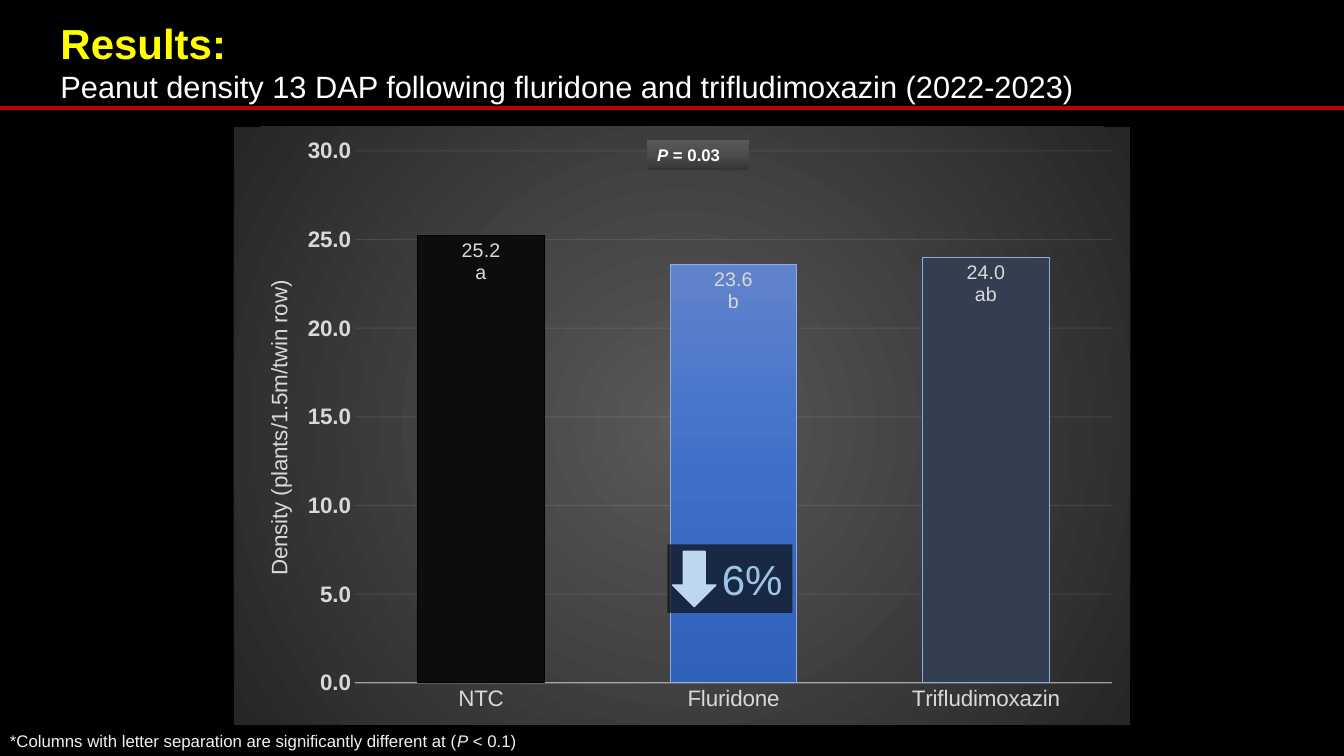
from lxml.etree import SubElement
from pptx import Presentation
from pptx.chart.data import CategoryChartData
from pptx.dml.color import RGBColor
from pptx.enum.chart import XL_CHART_TYPE, XL_LABEL_POSITION, XL_TICK_MARK
from pptx.enum.shapes import MSO_CONNECTOR, MSO_SHAPE
from pptx.enum.text import MSO_ANCHOR, PP_ALIGN
from pptx.oxml import parse_xml
from pptx.oxml.ns import nsdecls, qn
from pptx.util import Inches, Pt

BLACK = RGBColor(0x00, 0x00, 0x00)
NEAR_BLACK = RGBColor(0x0D, 0x0D, 0x0D)
WHITE = RGBColor(0xFF, 0xFF, 0xFF)
OFF_WHITE = RGBColor(0xF2, 0xF2, 0xF2)
LIGHT_GRAY = RGBColor(0xD9, 0xD9, 0xD9)
MID_GRAY = RGBColor(0x59, 0x59, 0x59)
GRAY = RGBColor(0x4B, 0x4B, 0x4B)
DARK_GRAY = RGBColor(0x35, 0x35, 0x35)
CHARCOAL = RGBColor(0x26, 0x26, 0x26)
YELLOW = RGBColor(0xFF, 0xFF, 0x00)
RED = RGBColor(0xC0, 0x00, 0x00)
SLATE = RGBColor(0x33, 0x3F, 0x50)
SKY = RGBColor(0x9D, 0xC3, 0xE6)
PALE_BLUE = RGBColor(0xBD, 0xD7, 0xEE)
OUTLINE_BLUE = RGBColor(0x8F, 0xAA, 0xDC)
BLUE_TOP = RGBColor(0x61, 0x83, 0xCB)
BLUE_MIDDLE = RGBColor(0x3E, 0x70, 0xCA)
BLUE_BOTTOM = RGBColor(0x30, 0x62, 0xBB)

LINEAR = '<a:lin ang="{}" scaled="0"/>'
UPWARD = LINEAR.format(16200000)
DOWNWARD = LINEAR.format(5400000)
RADIAL = ('<a:path path="circle"><a:fillToRect l="50000" t="50000" '
          'r="50000" b="50000"/></a:path>')


def gradient(colors, direction):
    step = 100000 // (len(colors) - 1)
    stops = "".join(f'<a:gs pos="{index * step}"><a:srgbClr val="{color}"/></a:gs>'
                    for index, color in enumerate(colors))
    return parse_xml(f'<a:gradFill {nsdecls("a")} rotWithShape="1">'
                     f'<a:gsLst>{stops}</a:gsLst>{direction}</a:gradFill>')


def replace_fill(properties, fill):
    properties.replace(properties.find(qn("a:noFill")), fill)


def set_opacity(color_element, percent):
    SubElement(color_element, qn("a:alpha")).set("val", str(percent * 1000))


def manual_layout(target=None, **shares):
    inner = f'<c:layoutTarget val="{target}"/>' if target else ""
    modes = "".join(f'<c:{axis}Mode val="edge"/>' for axis in "xy")
    values = "".join(f'<c:{name} val="{share}"/>' for name, share in shares.items())
    return parse_xml(f'<c:layout {nsdecls("c")}><c:manualLayout>'
                     f'{inner}{modes}{values}</c:manualLayout></c:layout>')


class SlideBuilder:
    font_name = "Arial"

    def __init__(self, presentation):
        self.width = presentation.slide_width
        self.height = presentation.slide_height
        self.slide = presentation.slides.add_slide(presentation.slide_layouts[6])
        self.slide.background.fill.solid()
        self.slide.background.fill.fore_color.rgb = BLACK

    def box(self, left, top, width, height):
        return (int(self.width * left / 100), int(self.height * top / 100),
                int(self.width * width / 100), int(self.height * height / 100))

    def style(self, font, size, color, bold=False):
        font.name = self.font_name
        font.size = Pt(size)
        font.color.rgb = color
        font.bold = bold

    def add_runs(self, paragraph, runs, size, color, bold=False):
        self.style(paragraph.font, size, color, bold)
        for text, italic in runs:
            run = paragraph.add_run()
            run.text = text
            if italic:
                run.font.italic = True

    def text(self, place, lines):
        frame = self.slide.shapes.add_textbox(*self.box(*place)).text_frame
        frame.word_wrap = True
        frame.vertical_anchor = MSO_ANCHOR.MIDDLE
        for index, (runs, size, color, bold) in enumerate(lines):
            paragraph = frame.add_paragraph() if index else frame.paragraphs[0]
            self.add_runs(paragraph, runs, size, color, bold)
        return frame

    def shape(self, kind, place, color=None):
        shape = self.slide.shapes.add_shape(kind, *self.box(*place))
        shape.shadow.inherit = False
        shape.line.fill.background()
        if color is None:
            shape.fill.background()
        else:
            shape.fill.solid()
            shape.fill.fore_color.rgb = color
        return shape

    def rule(self, top, color, weight):
        left, y, width, _ = self.box(0, top, 100, 0)
        connector = self.slide.shapes.add_connector(
            MSO_CONNECTOR.STRAIGHT, left, y, width, y)
        connector.line.color.rgb = color
        connector.line.width = Pt(weight)
        SubElement(connector._element.spPr, qn("a:effectLst"))

    def axis_line(self, line, weight, opacity, element):
        line.color.rgb = OFF_WHITE
        line.width = Pt(weight)
        set_opacity(element.xpath("c:spPr/a:ln/a:solidFill/a:srgbClr")[0], opacity)

    def column_chart(self, place, columns, axis_title):
        data = CategoryChartData(number_format="0.0")
        data.categories = [name for name, *_ in columns]
        data.add_series("Series 1", [value for _, value, *_ in columns])
        chart = self.slide.shapes.add_chart(
            XL_CHART_TYPE.COLUMN_CLUSTERED, *self.box(*place), data).chart
        chart.has_title = False
        chart.has_legend = False
        self.style(chart.font, 14, LIGHT_GRAY)
        backdrop = parse_xml(f'<c:spPr {nsdecls("c", "a")}><a:noFill/>'
                             '<a:ln><a:noFill/></a:ln></c:spPr>')
        replace_fill(backdrop, gradient([MID_GRAY, CHARCOAL], RADIAL))
        chart._chartSpace.find(qn("c:txPr")).addprevious(backdrop)
        self.style_axes(chart, axis_title)
        self.style_columns(chart.plots[0], columns)

    def style_axes(self, chart, axis_title):
        for axis, bold in ((chart.category_axis, False), (chart.value_axis, True)):
            axis.major_tick_mark = XL_TICK_MARK.NONE
            axis.minor_tick_mark = XL_TICK_MARK.NONE
            self.style(axis.tick_labels.font, 16, LIGHT_GRAY, bold)
        categories, values = chart.category_axis, chart.value_axis
        self.axis_line(categories.format.line, 1, 54, categories._element)
        values.format.line.fill.background()
        values.minimum_scale, values.maximum_scale, values.major_unit = 0, 30, 5
        values.tick_labels.number_format = "0.0"
        values.tick_labels.number_format_is_linked = False
        self.axis_line(values.major_gridlines.format.line, 0.75, 10,
                       values._element.find(qn("c:majorGridlines")))
        paragraph = values.axis_title.text_frame.paragraphs[0]
        self.add_runs(paragraph, [(axis_title, False)], 16, LIGHT_GRAY)
        title = values.axis_title._element
        for layout in title.findall(qn("c:layout")):
            title.remove(layout)
        title.find(qn("c:tx")).addnext(manual_layout(x=0.03, y=0.25))
        area = chart._chartSpace.chart.plotArea
        for layout in area.findall(qn("c:layout")):
            area.remove(layout)
        area.insert(0, manual_layout("inner", x=0.135, y=0.04, w=0.845, h=0.89))

    def style_columns(self, plot, columns):
        plot.gap_width = 100
        plot.overlap = -24
        plot.vary_by_categories = False
        series = plot.series[0]
        series.invert_if_negative = False
        labels = series.data_labels
        labels.show_value = True
        labels.number_format = "0.0"
        labels.number_format_is_linked = False
        labels.position = XL_LABEL_POSITION.INSIDE_END
        self.style(labels.font, 14, LIGHT_GRAY)
        for index, (_, value, letters, color, outline) in enumerate(columns):
            point = series.points[index]
            point.format.line.color.rgb = outline
            point.format.line.width = Pt(0.75)
            if color is None:
                point.format.fill.background()
                properties = series._element.xpath(f"c:dPt[c:idx/@val='{index}']/c:spPr")[0]
                replace_fill(properties, gradient(
                    [BLUE_TOP, BLUE_MIDDLE, BLUE_BOTTOM], DOWNWARD))
            else:
                point.format.fill.solid()
                point.format.fill.fore_color.rgb = color
            frame = point.data_label.text_frame
            frame.text = f"{value:.1f}\n{letters}"
            for paragraph in frame.paragraphs:
                self.style(paragraph.runs[0].font, 14, LIGHT_GRAY)
            point.data_label.position = XL_LABEL_POSITION.INSIDE_END


def main():
    presentation = Presentation()
    presentation.slide_width, presentation.slide_height = Inches(13.33), Inches(7.5)
    builder = SlideBuilder(presentation)

    heading = builder.text((0, 0, 100, 15.47), [
        ([("Results:", False)], 30, YELLOW, True),
        ([("Peanut density 13 DAP following fluridone and trifludimoxazin (2022-2023)",
           False)], 22, WHITE, False)])
    heading.margin_left, heading.margin_top = Inches(0.6), Inches(0.1)
    builder.text((0, 96, 41.41, 4), [
        ([("*Columns with letter separation are significantly different at (", False),
          ("P", True), (" < 0.1)", False)], 12, OFF_WHITE, False)])

    builder.column_chart((17.4, 16.8, 66.69, 79.07), [
        ("NTC", 25.2, "a", NEAR_BLACK, BLACK),
        ("Fluridone", 23.6, "b", None, OUTLINE_BLUE),
        ("Trifludimoxazin", 24.0, "ab", SLATE, OUTLINE_BLUE)],
        "Density (plants/1.5m/twin row)")

    p_value = builder.shape(MSO_SHAPE.RECTANGLE, (48.16, 18.53, 7.58, 4))
    replace_fill(p_value._element.spPr, gradient([DARK_GRAY, GRAY, MID_GRAY], UPWARD))
    paragraph = p_value.text_frame.paragraphs[0]
    paragraph.alignment = PP_ALIGN.LEFT
    builder.add_runs(paragraph, [("P", True), (" = 0.03", False)], 12, WHITE, True)

    builder.rule(14.27, RED, 3)

    change = builder.shape(MSO_SHAPE.RECTANGLE, (49.66, 72, 9.3, 9.07), NEAR_BLACK)
    set_opacity(change._element.xpath("p:spPr/a:solidFill/a:srgbClr")[0], 70)
    paragraph = change.text_frame.paragraphs[0]
    paragraph.alignment = PP_ALIGN.RIGHT
    builder.add_runs(paragraph, [("6%", False)], 30, SKY)

    arrow = builder.shape(MSO_SHAPE.DOWN_ARROW, (50.04, 72.93, 3.23, 7.33), PALE_BLUE)
    arrow.line.color.rgb = PALE_BLUE
    arrow.line.width = Pt(1)

    presentation.save("out.pptx")


if __name__ == "__main__":
    main()
